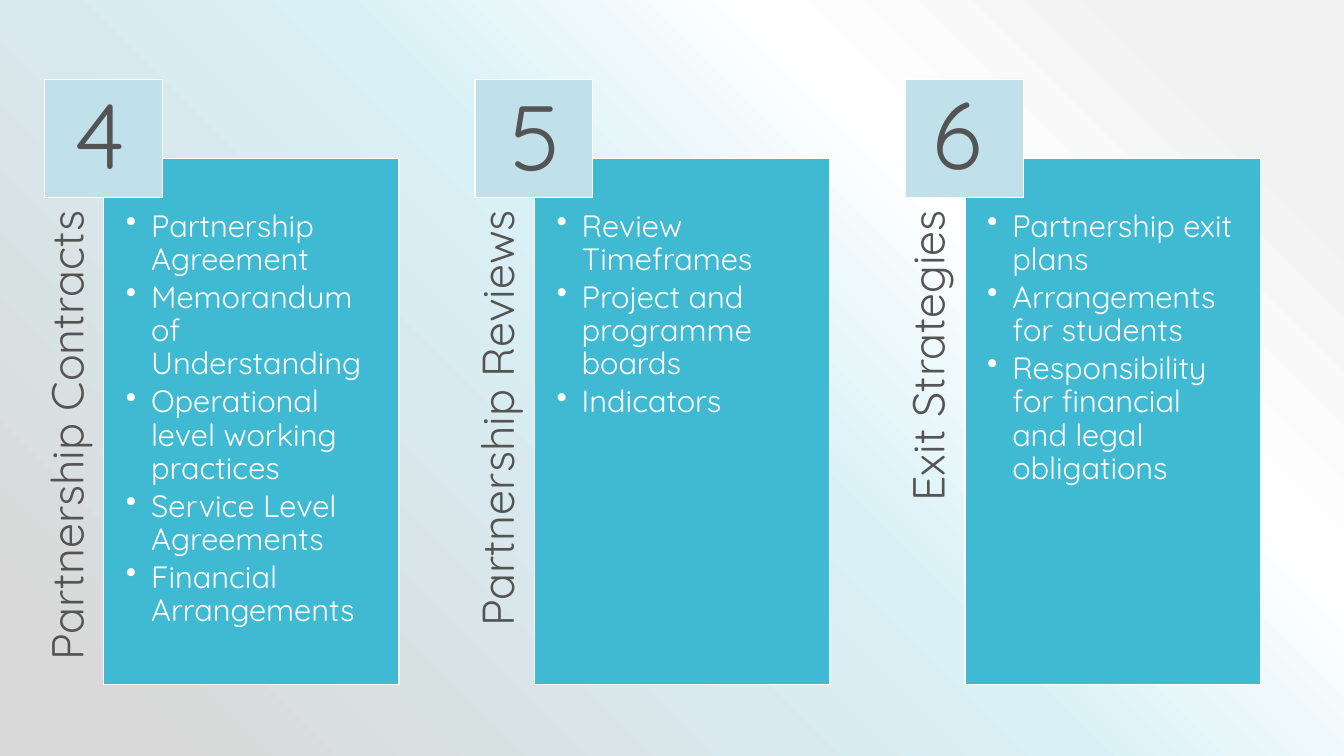
from lxml import etree
from pptx import Presentation
from pptx.dml.color import RGBColor
from pptx.enum.shapes import MSO_SHAPE
from pptx.enum.text import MSO_ANCHOR, MSO_AUTO_SIZE, PP_ALIGN
from pptx.oxml import parse_xml
from pptx.oxml.ns import nsdecls, qn
from pptx.util import Inches, Pt

TEAL = RGBColor(0x40, 0xBA, 0xD2)
PALE_BLUE = RGBColor(0xC0, 0xE0, 0xEA)
GREY = RGBColor(0x54, 0x54, 0x54)
WHITE = RGBColor(0xFF, 0xFF, 0xFF)
BACKGROUND_STOPS = [(10, "F2F2F2"), (28, "FFFFFF"), (48, "D9F1F6"), (93, "D9D9D9")]

COLUMN_PITCH = 4.27
PANEL_TOP, PANEL_WIDTH, PANEL_HEIGHT = 1.57, 2.93, 5.22
LABEL_HEIGHT = 0.59

# Number, left and top of the number, heading, bullet points
COLUMNS = [
    ("4", 0.52, 0.84, "Partnership Contracts", [
        "Partnership Agreement", "Memorandum of Understanding",
        "Operational level working practices", "Service Level Agreements",
        "Financial Arrangements"]),
    ("5", 4.85, 0.86, "Partnership Reviews", [
        "Review Timeframes", "Project and programme boards", "Indicators"]),
    ("6", 9.03, 0.84, "Exit Strategies", [
        "Partnership exit plans", "Arrangements for students",
        "Responsibility for financial and legal obligations"]),
]


def write_text(shape, lines, size, color, align=PP_ALIGN.LEFT,
               insets=(0.1, 0.05, 0.1, 0.05), space_after=0, bullets=False):
    frame = shape.text_frame
    frame.word_wrap = True
    frame.vertical_anchor = MSO_ANCHOR.TOP
    (frame.margin_left, frame.margin_top,
     frame.margin_right, frame.margin_bottom) = map(Inches, insets)
    for index, line in enumerate(lines):
        paragraph = frame.add_paragraph() if index else frame.paragraphs[0]
        paragraph.alignment = align
        paragraph.line_spacing = 0.9
        paragraph.space_after = Pt(space_after)
        run = paragraph.add_run()
        run.text = line
        run.font.name = "Quicksand"
        run.font.size = Pt(size)
        run.font.color.rgb = color
        if bullets:
            properties = paragraph._p.get_or_add_pPr()
            properties.set("marL", str(Inches(0.25)))
            properties.set("indent", str(Inches(-0.25)))
            etree.SubElement(properties, qn("a:buChar")).set("char", "•")


def add_box(slide, left, top, width, height, color):
    shape = slide.shapes.add_shape(MSO_SHAPE.RECTANGLE, Inches(left), Inches(top),
                                   Inches(width), Inches(height))
    shape.shadow.inherit = False
    shape.fill.solid()
    shape.fill.fore_color.rgb = color
    shape.line.color.rgb = WHITE
    shape.line.width = Pt(1)
    return shape


presentation = Presentation()
presentation.slide_width = Inches(13.33)
presentation.slide_height = Inches(7.5)
slide = presentation.slides.add_slide(presentation.slide_layouts[6])

# Background: gradient spreading from the top right corner
slide.background.fill.solid()
background = slide.element.cSld.find(qn("p:bg")).find(qn("p:bgPr"))
stops = "".join(f'<a:gs pos="{position * 1000}"><a:srgbClr val="{color}"/></a:gs>'
                for position, color in BACKGROUND_STOPS)
background.replace(background[0], parse_xml(
    f'<a:gradFill {nsdecls("a")} rotWithShape="1"><a:gsLst>{stops}</a:gsLst>'
    '<a:path path="circle"><a:fillToRect l="100000" b="100000"/></a:path>'
    '<a:tileRect t="-100000" r="-100000"/></a:gradFill>'))

# Columns: sideways heading, panel with bullets, number square
for index, (number, number_left, number_top, heading, points) in enumerate(COLUMNS):
    offset = index * COLUMN_PITCH

    label = slide.shapes.add_textbox(Inches(offset - 1.87), Inches(3.88),
                                     Inches(PANEL_HEIGHT), Inches(LABEL_HEIGHT))
    label.rotation = 270
    write_text(label, [heading], 32, GREY, align=PP_ALIGN.RIGHT, insets=(0, 0, 0.52, 0))

    panel = add_box(slide, offset + 1.03, PANEL_TOP, PANEL_WIDTH, PANEL_HEIGHT, TEAL)
    write_text(panel, points, 22, WHITE, insets=(0.22, 0.52, 0.22, 0.22),
               space_after=3.3, bullets=True)

    add_box(slide, offset + 0.44, 0.79, 1.17, 1.17, PALE_BLUE)

    digit = slide.shapes.add_textbox(Inches(number_left), Inches(number_top),
                                     Inches(0.94), Inches(1.1))
    write_text(digit, [number], 66, GREY, align=PP_ALIGN.CENTER)
    digit.text_frame.auto_size = MSO_AUTO_SIZE.SHAPE_TO_FIT_TEXT

presentation.save("out.pptx")
